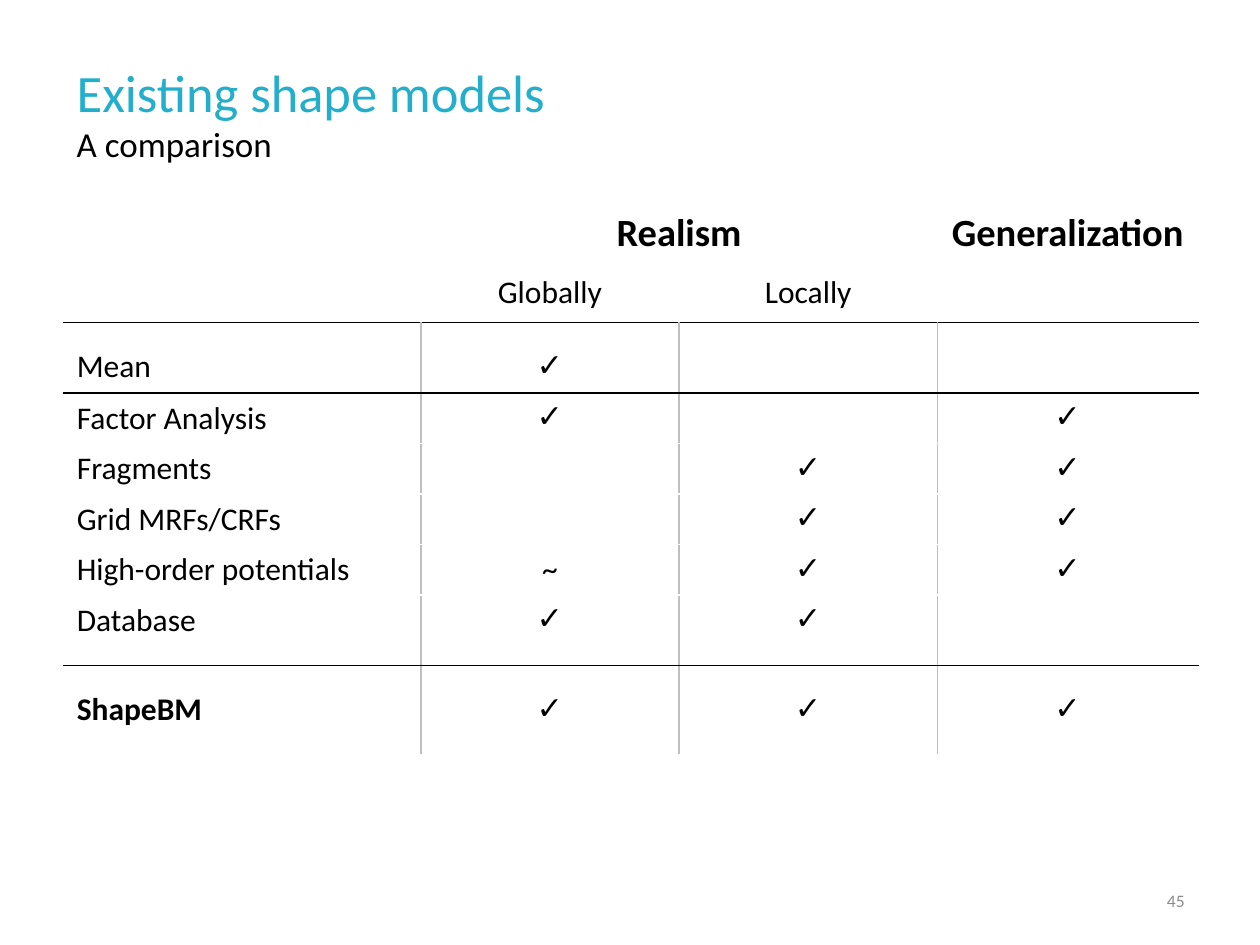
from pptx import Presentation
from pptx.dml.color import RGBColor as Rgb
from pptx.enum.text import MSO_ANCHOR as Anchor, PP_ALIGN as Align
from pptx.oxml.ns import qn
from pptx.util import Inches, Pt
from lxml.etree import SubElement as Sub

COLORS = {"title": "23AFCB", "text": "000000", "page": "8C8C8C", "grid": "BFBFBF"}
WIDTHS = [2.83, 2.05, 2.05, 2.07]
HEIGHTS = [0.47, 0.47, 0.56, 0.4, 0.4, 0.4, 0.4, 0.56, 0.71]
ROWS = [
    ["", "Realism", "", "Generalization"],
    ["", "Globally", "Locally", ""],
    ["Mean", "✓", "", ""],
    ["Factor Analysis", "✓", "", "✓"],
    ["Fragments", "", "✓", "✓"],
    ["Grid MRFs/CRFs", "", "✓", "✓"],
    ["High-order potentials", "~", "✓", "✓"],
    ["Database", "✓", "✓", ""],
    ["ShapeBM", "✓", "✓", "✓"],
]
HEADS = 2
LAST = len(ROWS) - 1
RULED = {1, 2, 7}
PAD_TOP = {2, 8}
PAD_LOW = {7, 8}


def style(para, size, color="text", bold=False, face="Calibri", align=Align.LEFT):
    para.alignment = align
    font = para.font
    font.name, font.size, font.bold = face, Pt(size), bold
    font.color.rgb = Rgb.from_string(COLORS[color])


def add_text(slide, text, box, size, color, anchor=Anchor.MIDDLE, align=Align.LEFT):
    frame = slide.shapes.add_textbox(*map(Inches, box)).text_frame
    frame.word_wrap = True
    frame.vertical_anchor = anchor
    para = frame.paragraphs[0]
    para.text = text
    style(para, size, color, align=align)


def add_edge(cell, side, color):
    line = Sub(cell._tc.get_or_add_tcPr(), qn("a:ln" + side), w=str(Pt(1)))
    fill = Sub(line, qn("a:solidFill"))
    Sub(fill, qn("a:srgbClr"), val=COLORS[color])


def add_edges(cell, row, col):
    if row >= HEADS and col > 0:
        add_edge(cell, "L", "grid")
    if row >= HEADS and col < len(WIDTHS) - 1:
        add_edge(cell, "R", "grid")
    if row - 1 in RULED:
        add_edge(cell, "T", "text")
    if row in RULED:
        add_edge(cell, "B", "text")


def fill_cell(cell, text, row, col):
    add_edges(cell, row, col)
    cell.fill.background()
    cell.vertical_anchor = Anchor.MIDDLE if row < HEADS else Anchor.TOP
    cell.margin_top = Inches(0.2 if row in PAD_TOP else 0.05)
    cell.margin_bottom = Inches(0.2 if row in PAD_LOW else 0.05)
    para = cell.text_frame.paragraphs[0]
    para.text = text
    style(
        para,
        22 if row == 0 else 18,
        bold=row == 0 or (row == LAST and col == 0),
        face="Arial" if text == "✓" else "Calibri",
        align=Align.CENTER if col else Align.LEFT,
    )


def add_grid(slide):
    box = map(Inches, (0.51, 1.62, sum(WIDTHS), sum(HEIGHTS)))
    table = slide.shapes.add_table(len(ROWS), len(WIDTHS), *box).table
    table.first_row = table.horz_banding = False
    for col, width in zip(table.columns, WIDTHS):
        col.width = Inches(width)
    for row, height in zip(table.rows, HEIGHTS):
        row.height = Inches(height)
    for r, texts in enumerate(ROWS):
        for c, text in enumerate(texts):
            fill_cell(table.cell(r, c), text, r, c)
    table.cell(0, 1).merge(table.cell(0, 2))


def main():
    deck = Presentation()
    deck.slide_width, deck.slide_height = Inches(10), Inches(7.5)
    slide = deck.slides.add_slide(deck.slide_layouts[6])
    add_text(slide, "Existing shape models", (0.51, 0.3, 8.98, 0.85), 30, "title")
    add_text(slide, "A comparison", (0.51, 0.92, 8.98, 0.55), 20, "text", Anchor.TOP)
    add_text(slide, "45", (7.17, 6.95, 2.33, 0.4), 10, "page", align=Align.RIGHT)
    add_grid(slide)
    deck.save("out.pptx")


if __name__ == "__main__":
    main()
